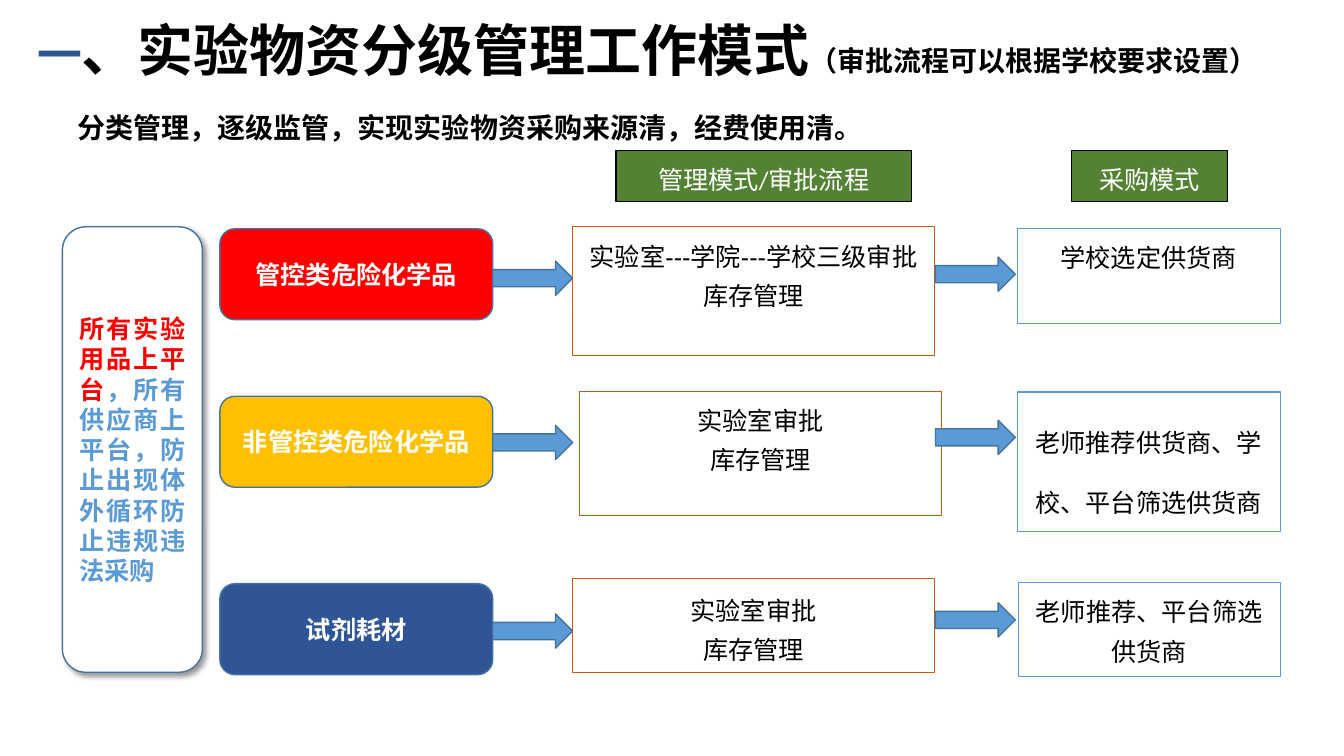
from lxml import etree
from pptx import Presentation
from pptx import util as u
from pptx.dml.color import RGBColor
from pptx.enum import shapes, text
from pptx.oxml.ns import qn

COLORS = {
    "red": "FF0000", "amber": "FFC000", "navy": "2F5597", "blue": "5B9BD5",
    "edge": "43739E", "rust": "C55A11", "green": "548235",
    "black": "000000", "white": "FFFFFF",
}
CJK = "Noto Sans CJK SC"
SHAPE = shapes.MSO_SHAPE
ALIGN = text.PP_ALIGN
ANCHOR = text.MSO_ANCHOR


def rgb(name):
    return RGBColor.from_string(COLORS[name])


class Deck:
    def __init__(self, width, height):
        self.prs = Presentation()
        self.prs.slide_width, self.prs.slide_height = u.Pt(width), u.Pt(height)
        self.slide = self.prs.slides.add_slide(self.prs.slide_layouts[6])

    def fill_text(self, shape, paragraphs, font=CJK, bold=False, align=ALIGN.CENTER,
                  spacing=None, anchor=ANCHOR.MIDDLE):
        """Each paragraph is a list of (text, size, color) runs."""
        frame = shape.text_frame
        frame.word_wrap = True
        frame.vertical_anchor = anchor
        frame.text = "\n".join("" for _ in paragraphs)
        for paragraph, runs in zip(frame.paragraphs, paragraphs):
            paragraph.alignment = align
            if spacing:
                paragraph.line_spacing = spacing
            for words, size, color in runs:
                run = paragraph.add_run()
                run.text = words
                run.font.size, run.font.bold = u.Pt(size), bold
                run.font.color.rgb = rgb(color)
                run.font.name = font
                latin = run.font._element.find(qn("a:latin"))
                east_asian = etree.Element(qn("a:ea"), typeface=CJK)
                latin.addnext(east_asian)

    def label(self, box, paragraphs, **style):
        textbox = self.slide.shapes.add_textbox(*map(u.Pt, box))
        self.fill_text(textbox, paragraphs, align=ALIGN.LEFT, **style)

    def shape(self, kind, box, fill=None, line="edge", weight=1):
        shape = self.slide.shapes.add_shape(kind, *map(u.Pt, box))
        shape.shadow.inherit = False
        if fill:
            shape.fill.solid()
            shape.fill.fore_color.rgb = rgb(fill)
        else:
            shape.fill.background()
        shape.line.color.rgb = rgb(line)
        shape.line.width = u.Pt(weight)
        return shape

    def arrow(self, left, top):
        self.shape(SHAPE.RIGHT_ARROW, (left, top, 57, 24.5), "blue")

    def category(self, top, name, fill):
        card = self.shape(SHAPE.ROUNDED_RECTANGLE, (157, top, 195, 65), fill)
        self.fill_text(card, [[(name, 18, "white")]], bold=True)

    def panel(self, box, lines, line, spacing=1.3, anchor=ANCHOR.TOP):
        panel = self.shape(SHAPE.RECTANGLE, box, line=line, weight=0.75)
        self.fill_text(panel, [[(words, 18, "black")] for words in lines],
                       font="Arial", spacing=spacing, anchor=anchor)

    def header(self, left, width, name):
        header = self.shape(SHAPE.RECTANGLE, (left, 107.3, width, 36.7), "green", "black")
        self.fill_text(header, [[(name, 18, "white")]], font="Calibri",
                       spacing=1.3, anchor=ANCHOR.TOP)

    def drop_shadow(self, shape):
        effects = shape._element.spPr.find(qn("a:effectLst"))
        shadow = etree.SubElement(
            effects, qn("a:outerShdw"), blurRad=str(u.Pt(4)), dist=str(u.Pt(3)),
            dir=str(45 * 60000), algn="tl", rotWithShape="0")
        color = etree.SubElement(shadow, qn("a:srgbClr"), val=COLORS["black"])
        etree.SubElement(color, qn("a:alpha"), val="40000")


def main():
    deck = Deck(960, 540)

    # Title and summary
    deck.label((19.4, 7.9, 906, 55.4), [[
        ("一", 32, "navy"),
        ("、实验物资分级管理工作模式", 40, "black"),
        ("（审批流程可以根据学校要求设置）", 20, "black"),
    ]], bold=True, anchor=ANCHOR.TOP)
    deck.label((48.2, 76.3, 582.5, 28.8), [[
        ("分类管理，逐级监管，实现实验物资采购来源清，经费使用清。", 20, "black"),
    ]], font="Calibri", bold=True)

    # Column headers
    deck.header(440, 211, "管理模式/审批流程")
    deck.header(765.4, 111.6, "采购模式")

    # Platform principle on the left
    principle = deck.shape(SHAPE.ROUNDED_RECTANGLE, (44.6, 162, 100, 318.2), "white")
    deck.drop_shadow(principle)
    deck.fill_text(principle, [[
        ("所有实验用品上平台", 18, "red"),
        ("，所有供应商上平台，防止出现体外循环防止违规违法采购", 18, "blue"),
    ]], bold=True, align=ALIGN.JUSTIFY)

    # One row per category: card, approval flow, purchasing mode
    # (name, fill, card top, arrow tops, approval box, approval lines,
    #  approval anchor, supplier box, supplier text, supplier spacing)
    rows = [
        ("管控类危险化学品", "red", 163.4, (186.5, 183.6),
         (409, 162, 258.5, 92.2), ["实验室---学院---学校三级审批", "库存管理"], ANCHOR.TOP,
         (726.5, 163.4, 188, 67.7), "学校选定供货商", 1.3),
        ("非管控类危险化学品", "amber", 283, (303.8, 300.2),
         (414, 279.4, 258.5, 88.6), ["实验室审批", "库存管理"], ANCHOR.TOP,
         (726.5, 280, 188, 99.4), "老师推荐供货商、学校、平台筛选供货商", 2.0),
        ("试剂耗材", "navy", 416.9, (438.5, 430.6),
         (409, 413.3, 258.5, 67), ["实验室审批", "库存管理"], ANCHOR.MIDDLE,
         (727.2, 416.2, 187.2, 67), "老师推荐、平台筛选供货商", 1.3),
    ]
    for (name, fill, top, arrow_tops, approval_box, approval, anchor,
         supplier_box, supplier, spacing) in rows:
        deck.category(top, name, fill)
        deck.panel(approval_box, approval, "rust", anchor=anchor)
        deck.panel(supplier_box, [supplier], "blue", spacing)
        for left, arrow_top in zip((352, 668.2), arrow_tops):
            deck.arrow(left, arrow_top)

    deck.prs.save("out.pptx")


if __name__ == "__main__":
    main()
